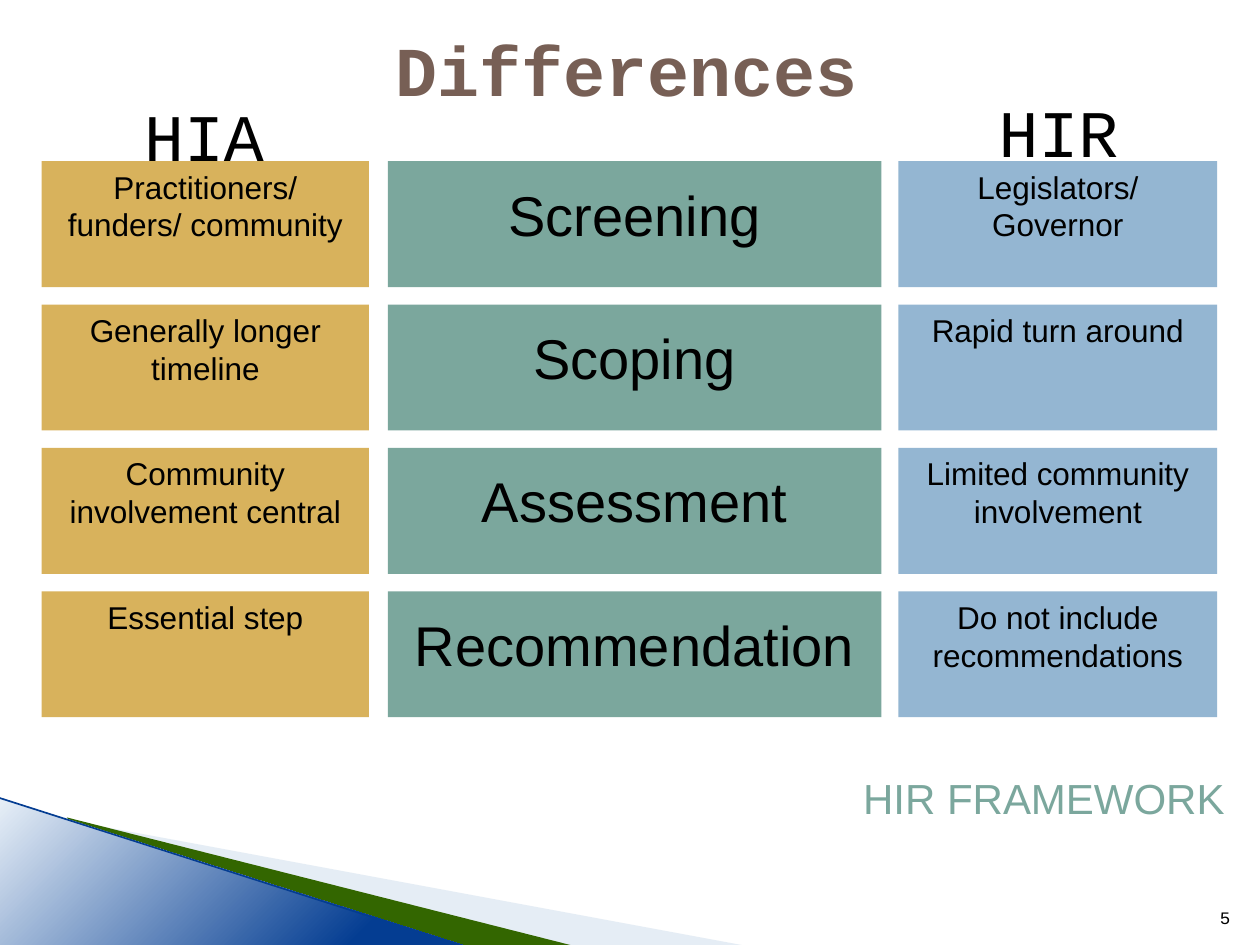
from dataclasses import dataclass

import pptx
import pptx.dml.color
import pptx.enum.shapes
import pptx.enum.text
import pptx.oxml.ns
import pptx.util
from lxml import etree
from pptx.util import Cm

ALIGN = pptx.enum.text.PP_ALIGN
ANCHOR = pptx.enum.text.MSO_ANCHOR
SHAPE = pptx.enum.shapes.MSO_SHAPE
BLACK, WHITE, NAVY, GREEN = "000000", "FFFFFF", "043D92", "7BA79D"
ROW_TOP, ROW_STEP, ROW_HEIGHT = 3.25, 2.89, 2.54


@dataclass
class Style:
    size: float
    font: str = "Arial"
    color: str = BLACK
    bold: bool = False
    align: ALIGN = ALIGN.CENTER
    anchor: ANCHOR = ANCHOR.TOP
    inset_top: float = 0.13


@dataclass
class Box:
    left: float
    top: float
    width: float
    height: float


@dataclass
class Column:
    left: float
    width: float
    fill: str
    style: Style
    steps: tuple[str, ...]


@dataclass
class Band:
    points: tuple[tuple[float, float], ...]
    color: str
    opacity: int = 100


def rgb(color: str) -> pptx.dml.color.RGBColor:
    return pptx.dml.color.RGBColor.from_string(color)


def write(shape, text: str, style: Style) -> None:
    frame = shape.text_frame
    frame.word_wrap = True
    frame.vertical_anchor = style.anchor
    frame.margin_left = frame.margin_right = Cm(0.25)
    frame.margin_top, frame.margin_bottom = Cm(style.inset_top), Cm(0.13)
    paragraph = frame.paragraphs[0]
    paragraph.alignment = style.align
    run = paragraph.add_run()
    run.text = text
    run.font.name = style.font
    run.font.size = pptx.util.Pt(style.size)
    run.font.bold = style.bold
    run.font.color.rgb = rgb(style.color)


def add_label(slide, box: Box, text: str, style: Style) -> None:
    label = slide.shapes.add_textbox(Cm(box.left), Cm(box.top), Cm(box.width), Cm(box.height))
    write(label, text, style)


def add_block(slide, box: Box, fill: str, text: str, style: Style) -> None:
    block = slide.shapes.add_shape(
        SHAPE.RECTANGLE, Cm(box.left), Cm(box.top), Cm(box.width), Cm(box.height)
    )
    block.shadow.inherit = False
    block.fill.solid()
    block.fill.fore_color.rgb = rgb(fill)
    block.line.fill.background()
    write(block, text, style)


def add_column(slide, column: Column) -> None:
    for row, step in enumerate(column.steps):
        box = Box(column.left, ROW_TOP + row * ROW_STEP, column.width, ROW_HEIGHT)
        add_block(slide, box, column.fill, step, column.style)


def add_band(slide, band: Band) -> None:
    start, *others = [(Cm(x), Cm(y)) for x, y in band.points]
    outline = slide.shapes.build_freeform(*start)
    outline.add_line_segments(others, close=True)
    stripe = outline.convert_to_shape()
    stripe.shadow.inherit = False
    stripe.fill.solid()
    stripe.fill.fore_color.rgb = rgb(band.color)
    stripe.line.fill.background()
    if band.opacity < 100:
        fill_color = stripe.fill._xPr.find(".//" + pptx.oxml.ns.qn("a:srgbClr"))
        alpha = etree.SubElement(fill_color, pptx.oxml.ns.qn("a:alpha"))
        alpha.set("val", str(band.opacity * 1000))


def add_corner(slide) -> None:
    wedge = slide.shapes.add_shape(
        SHAPE.RIGHT_TRIANGLE, Cm(-0.03), Cm(16.08), Cm(9.45), Cm(3)
    )
    wedge.shadow.inherit = False
    wedge.line.fill.background()
    wedge.fill.gradient()
    wedge.fill.gradient_angle = 315
    for stop, color, position in zip(wedge.fill.gradient_stops, ("E8F0F8", NAVY), (0, 0.81)):
        stop.color.rgb = rgb(color)
        stop.position = position
    edge = slide.shapes.add_connector(
        pptx.enum.shapes.MSO_CONNECTOR.STRAIGHT, Cm(-0.03), Cm(16.08), Cm(9.42), Cm(19.1)
    )
    edge.line.color.rgb = rgb(NAVY)
    edge.line.width = pptx.util.Pt(0.95)
    etree.SubElement(edge._element.spPr, pptx.oxml.ns.qn("a:effectLst"))


BANDS = (
    Band(((1.4, 16.54), (15.11, 19.08), (11.58, 19.08), (1.4, 16.51)), "C0D3E6", 40),
    Band(((1.35, 16.48), (11.61, 19.08), (9.45, 19.1), (1.37, 16.51)), "336600"),
)
HEADING = Style(38, "Courier New")
DETAIL = Style(18)
STAGE = Style(32, inset_top=0.38)
HIA = Column(0.84, 6.6, "D8B25C", DETAIL, (
    "Practitioners/ funders/ community",
    "Generally longer timeline",
    "Community involvement central",
    "Essential step",
))
HIR = Column(18.11, 6.43, "94B6D2", DETAIL, (
    "Legislators/ Governor",
    "Rapid turn around",
    "Limited community involvement",
    "Do not include recommendations",
))
STAGES = Column(7.82, 9.95, GREEN, STAGE, (
    "Screening", "Scoping", "Assessment", "Recommendation",
))


def main() -> None:
    deck = pptx.Presentation()
    deck.slide_width, deck.slide_height = Cm(25.4), Cm(19.05)
    slide = deck.slides.add_slide(deck.slide_layouts[6])
    for band in BANDS:
        add_band(slide, band)
    add_corner(slide)
    add_block(slide, Box(0.84, 1.78, 6.55, 1.88), WHITE, "HIA", HEADING)
    add_label(slide, Box(1.27, 0.36, 22.73, 2.03), "Differences",
              Style(40, "Courier New", "775F55", bold=True, anchor=ANCHOR.MIDDLE))
    add_column(slide, HIA)
    add_block(slide, Box(18.19, 1.7, 6.3, 1.88), WHITE, "HIR", HEADING)
    add_column(slide, HIR)
    add_column(slide, STAGES)
    add_label(slide, Box(17.15, 15.44, 8.05, 1.27), "HIR FRAMEWORK",
              Style(24, color=GREEN, align=ALIGN.LEFT))
    add_label(slide, Box(24.03, 17.81, 1.02, 1.02), "5",
              Style(10, "Courier New", align=ALIGN.RIGHT, anchor=ANCHOR.BOTTOM))
    deck.save("out.pptx")


if __name__ == "__main__":
    main()
